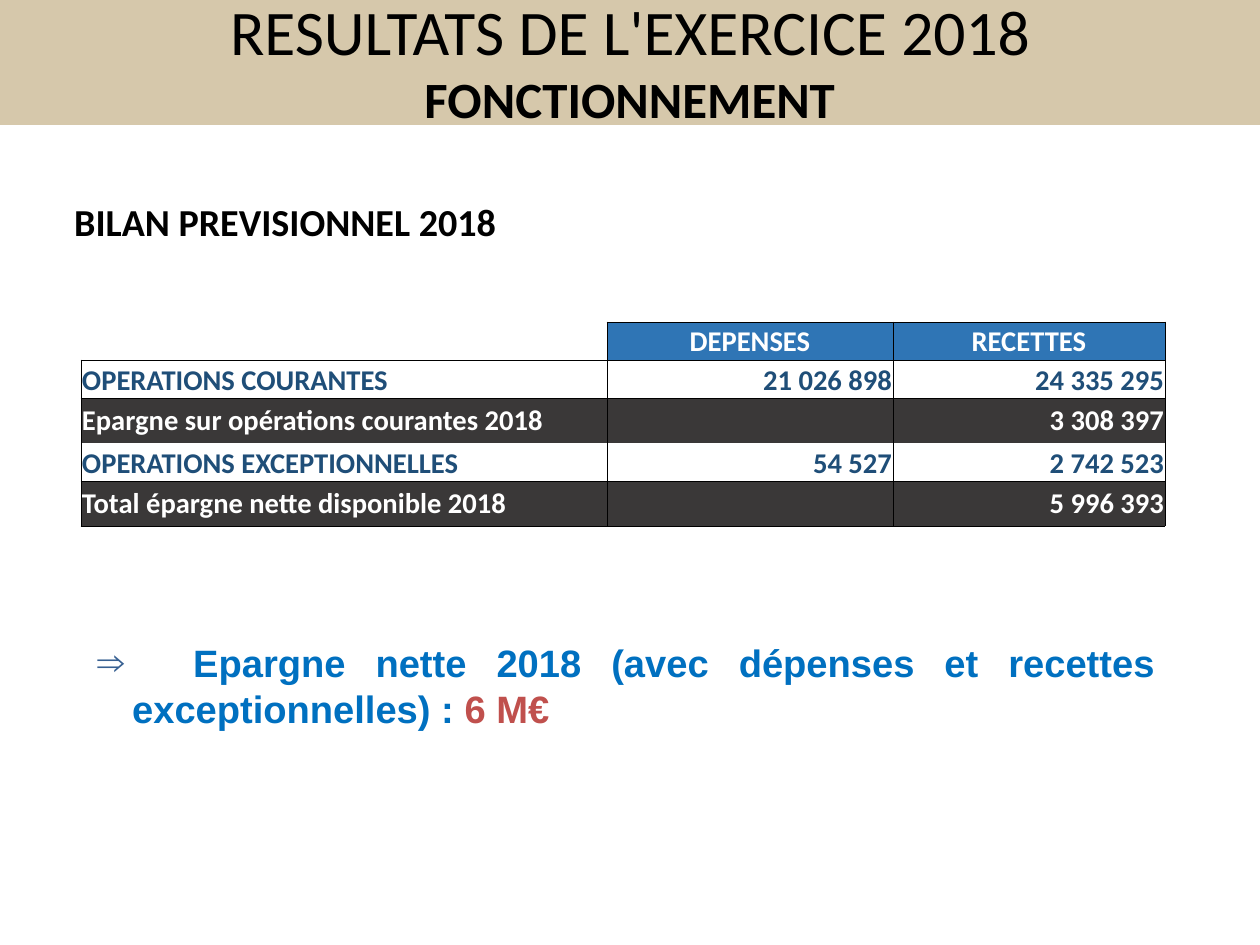
from dataclasses import dataclass

from lxml import etree
from pptx import Presentation
from pptx import util as u
from pptx.dml.color import RGBColor
from pptx.enum import shapes, text
from pptx.oxml import ns

PX = 8000  # EMU in one px
PAGE_WIDTH, PAGE_HEIGHT = 1260, 945
BLACK = RGBColor(0x00, 0x00, 0x00)
WHITE = RGBColor(0xFF, 0xFF, 0xFF)
SAND = RGBColor(0xD6, 0xC8, 0xAB)
HEADER_BLUE = RGBColor(0x2F, 0x75, 0xB5)
NAVY = RGBColor(0x1F, 0x4E, 0x78)
CHARCOAL = RGBColor(0x3A, 0x38, 0x38)
BRIGHT_BLUE = RGBColor(0x00, 0x70, 0xC0)
BRICK = RGBColor(0xC0, 0x50, 0x4D)
BULLET_BLUE = RGBColor(0x37, 0x60, 0x92)

LEFT, CENTER, RIGHT = text.PP_ALIGN.LEFT, text.PP_ALIGN.CENTER, text.PP_ALIGN.RIGHT
MIDDLE, BOTTOM = text.MSO_ANCHOR.MIDDLE, text.MSO_ANCHOR.BOTTOM


@dataclass(frozen=True)
class RowStyle:
    height: int
    fill: RGBColor
    color: RGBColor
    anchor: text.MSO_ANCHOR
    aligns: tuple
    borders: str


@dataclass(frozen=True)
class BudgetRow:
    style: RowStyle
    labels: tuple


AMOUNTS = (LEFT, RIGHT, RIGHT)
HEADER = RowStyle(38, HEADER_BLUE, WHITE, MIDDLE, (CENTER,) * 3, "LRTB")
FIRST_LINE = RowStyle(38, WHITE, NAVY, BOTTOM, AMOUNTS, "LRTB")
SUBTOTAL = RowStyle(45, CHARCOAL, WHITE, MIDDLE, AMOUNTS, "LRT")
SECOND_LINE = RowStyle(38, WHITE, NAVY, BOTTOM, AMOUNTS, "LRB")
TOTAL = RowStyle(45, CHARCOAL, WHITE, MIDDLE, AMOUNTS, "LRTB")
COLUMNS = (526, 286, 272)
BUDGET = (
    BudgetRow(HEADER, ("", "DEPENSES", "RECETTES")),
    BudgetRow(FIRST_LINE, ("OPERATIONS COURANTES", "21 026 898", "24 335 295")),
    BudgetRow(SUBTOTAL, ("Epargne sur opérations courantes 2018", "", "3 308 397")),
    BudgetRow(SECOND_LINE, ("OPERATIONS EXCEPTIONNELLES", "54 527", "2 742 523")),
    BudgetRow(TOTAL, ("Total épargne nette disponible 2018", "", "5 996 393")),
)


def add_span(para, words: str, size: int, color: RGBColor,
             font: str = "Calibri", bold: bool = True) -> None:
    span = para.add_run()
    span.text = words
    span.font.size = u.Pt(size)
    span.font.name = font
    span.font.bold = bold
    span.font.color.rgb = color


def add_box(page, left: int, top: int, width: int, height: int):
    box = page.shapes.add_textbox(left * PX, top * PX, width * PX, height * PX)
    box.text_frame.word_wrap = True
    return box


def add_band(page) -> None:
    band = page.shapes.add_shape(shapes.MSO_SHAPE.RECTANGLE,
                                 -5 * PX, 0, 1265 * PX, 125 * PX)
    band.shadow.inherit = False
    band.fill.solid()
    band.fill.fore_color.rgb = SAND
    band.line.fill.background()


def add_title(page) -> None:
    frame = add_box(page, 63, 0, 1134, 121).text_frame
    frame.vertical_anchor = MIDDLE
    para = frame.paragraphs[0]
    para.alignment = CENTER
    add_span(para, "RESULTATS DE L'EXERCICE 2018", 40, BLACK, bold=False)
    para.add_line_break()
    add_span(para, "FONCTIONNEMENT", 32, BLACK)


def set_borders(cell, sides: str) -> None:
    """Draw thin black lines on the given sides and none on the others."""
    props = cell._tc.get_or_add_tcPr()
    for place, side in enumerate("LRTB"):
        line = etree.Element(ns.qn(f"a:ln{side}"), w=str(u.Pt(0.5)))
        if side in sides:
            fill = etree.SubElement(line, ns.qn("a:solidFill"))
            etree.SubElement(fill, ns.qn("a:srgbClr"), val=str(BLACK))
        else:
            etree.SubElement(line, ns.qn("a:noFill"))
        props.insert(place, line)


def fill_cell(cell, words: str, align, style: RowStyle) -> None:
    cell.margin_left = cell.margin_right = cell.margin_top = PX
    cell.margin_bottom = 0
    cell.vertical_anchor = style.anchor
    cell.fill.solid()
    cell.fill.fore_color.rgb = style.fill
    if words:
        para = cell.text_frame.paragraphs[0]
        para.alignment = align
        add_span(para, words, 18, style.color)


def add_budget_table(page) -> None:
    height = sum(row.style.height for row in BUDGET)
    table = page.shapes.add_table(len(BUDGET), len(COLUMNS), 81 * PX, 322 * PX,
                                  sum(COLUMNS) * PX, height * PX).table
    table.first_row = table.horz_banding = False
    for column, width in zip(table.columns, COLUMNS):
        column.width = width * PX
    for r, row in enumerate(BUDGET):
        table.rows[r].height = row.style.height * PX
        for c, (words, align) in enumerate(zip(row.labels, row.style.aligns)):
            cell = table.cell(r, c)
            fill_cell(cell, words, align, row.style)
            is_corner = r == c == 0
            if is_corner:
                cell.fill.background()
            set_borders(cell, "RB" if is_corner else row.style.borders)


def add_arrow_bullet(para) -> None:
    """Hang the paragraph on an arrow, with a tab stop for its first word."""
    props = para._p.get_or_add_pPr()
    props.set("marL", str(35 * PX))
    props.set("indent", str(-35 * PX))
    color = etree.SubElement(props, ns.qn("a:buClr"))
    etree.SubElement(color, ns.qn("a:srgbClr"), val=str(BULLET_BLUE))
    etree.SubElement(props, ns.qn("a:buFont"), typeface="Arial")
    etree.SubElement(props, ns.qn("a:buChar"), char="⇒")
    stops = etree.SubElement(props, ns.qn("a:tabLst"))
    etree.SubElement(stops, ns.qn("a:tab"), pos=str(96 * PX), algn="l")


def add_conclusion(page) -> None:
    para = add_box(page, 86, 634, 1080, 104).text_frame.paragraphs[0]
    para.alignment = text.PP_ALIGN.JUSTIFY
    add_arrow_bullet(para)
    add_span(para, "\tEpargne nette 2018 (avec dépenses et recettes exceptionnelles) : ",
             24, BRIGHT_BLUE, "Arial")
    add_span(para, "6 M€", 24, BRICK, "Arial")


def add_heading(page) -> None:
    para = add_box(page, 63, 193, 1080, 57).text_frame.paragraphs[0]
    add_span(para, "BILAN PREVISIONNEL 2018", 24, BLACK)


def main() -> None:
    deck = Presentation()
    deck.slide_width, deck.slide_height = PAGE_WIDTH * PX, PAGE_HEIGHT * PX
    page = deck.slides.add_slide(deck.slide_layouts[6])
    add_band(page)
    add_conclusion(page)
    add_title(page)
    add_budget_table(page)
    add_heading(page)
    deck.save("out.pptx")


if __name__ == "__main__":
    main()
